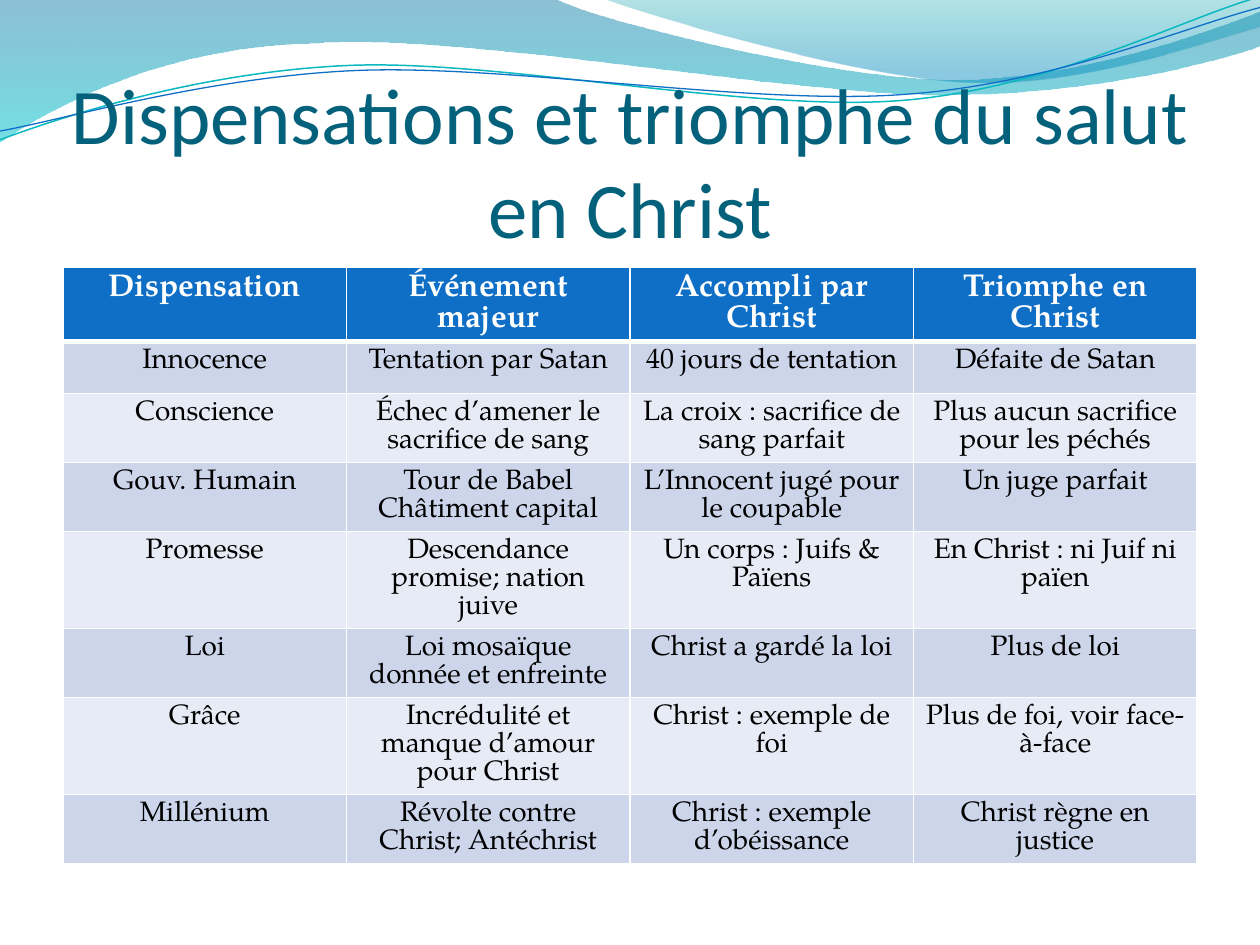
from lxml import etree
from pptx import Presentation
from pptx import util as u
from pptx.dml.color import RGBColor
from pptx.enum import text
from pptx.oxml.ns import qn

BLUE, TEAL, WHITE = "0F6FC6", "0AB8BF", "FFFFFF"
BANDS = ["CCD5EA", "E7EBF5"]
HEAD = ["Dispensation", "Événement majeur", "Accompli par Christ", "Triomphe en Christ"]
ROWS = [
    ["Innocence", "Tentation par Satan", "40 jours de tentation", "Défaite de Satan"],
    ["Conscience", "Échec d’amener le sacrifice de sang",
     "La croix : sacrifice de sang parfait", "Plus aucun sacrifice pour les péchés"],
    ["Gouv. Humain", "Tour de Babel\nChâtiment capital",
     "L’Innocent jugé pour le coupable", "Un juge parfait"],
    ["Promesse", "Descendance promise; nation juive",
     "Un corps : Juifs & Païens", "En Christ : ni Juif ni païen"],
    ["Loi", "Loi mosaïque donnée et enfreinte", "Christ a gardé la loi", "Plus de loi"],
    ["Grâce", "Incrédulité et manque d’amour pour Christ",
     "Christ : exemple de foi", "Plus de foi, voir face-à-face"],
    ["Millénium", "Révolte contre Christ; Antéchrist",
     "Christ : exemple d’obéissance", "Christ règne en justice"],
]

# An outline is a list of steps: one point is a line, three points are a curve.
WAVE = [[(0, 0)], [(4.4, -0.01)],
        [(4.76, 0.17), (6.64, 0.63), (7.58, 0.63)],
        [(8.53, 0.63), (9.58, 0.26), (10, 0.09)],
        [(10.01, 0.36)],
        [(9.83, 0.44), (8.7, 0.76), (7.46, 0.75)],
        [(6.22, 0.75), (3.82, 0.28), (2.57, 0.34)],
        [(1.29, 0.36), (0.46, 0.83), (-0.01, 1.13)], [(0, 0)]]
CREST = [[(4.79, -0.01)],
         [(5.09, 0.11), (6.82, 0.62), (7.69, 0.65)],
         [(8.56, 0.69), (9.61, 0.32), (10, 0.21)],
         [(10, 0)], [(4.79, -0.01)]]
TEAL_LINE = [[(0, 1.11)],
             [(0.48, 0.93), (1.58, 0.57), (2.77, 0.52)],
             [(3.95, 0.47), (5.93, 0.89), (7.13, 0.8)],
             [(8.33, 0.71), (9.38, 0.15), (9.98, -0.02)]]
BLUE_LINE = [[(0, 1.04)],
             [(0.47, 0.96), (1.64, 0.61), (2.83, 0.56)],
             [(4.03, 0.51), (5.97, 0.84), (7.17, 0.75)],
             [(8.36, 0.67), (9.41, 0.21), (10, 0.06)]]


def color(code):
    return RGBColor.from_string(code)


def outline(slide, steps, close):
    """Build a freeform, then join each three-point step into one Bézier curve."""
    pts = [(u.Inches(x), u.Inches(y)) for step in steps for x, y in step]
    pen = slide.shapes.build_freeform(*pts[0])
    pen.add_line_segments(pts[1:], close=close)
    shape = pen.convert_to_shape()
    shape.shadow.inherit = False
    lines = iter(list(shape.element.spPr.iter(qn("a:lnTo"))))
    for step in steps[1:]:
        group = [next(lines) for _ in step]
        if len(group) == 3:
            bend = etree.Element(qn("a:cubicBezTo"))
            group[0].addprevious(bend)
            for line in group:
                bend.append(line[0])
                line.getparent().remove(line)
    return shape


def wave(slide, steps, stops):
    """Draw a borderless area; stops hold position, colour and opacity."""
    shape = outline(slide, steps, True)
    shape.line.fill.background()
    shape.fill.gradient()
    shape.fill.gradient_angle = 270
    for stop, (pos, code, _) in zip(shape.fill.gradient_stops, stops):
        stop.position = pos
        stop.color.rgb = color(code)
    tags = list(shape.element.spPr.iter(qn("a:srgbClr")))
    for tag, (_, _, alpha) in zip(tags, stops):
        etree.SubElement(tag, qn("a:alpha"), val=str(alpha * 1000))


def stroke(slide, steps, code, width):
    shape = outline(slide, steps, False)
    shape.fill.background()
    shape.line.color.rgb = color(code)
    shape.line.width = u.Pt(width)


def write(frame, words, size, font, code, bold=False, pitch=None):
    frame.text = words
    frame.word_wrap = True
    for par in frame.paragraphs:
        par.alignment = text.PP_ALIGN.CENTER
        if pitch:
            par.line_spacing = u.Pt(pitch)
        for run in par.runs:
            face = run.font
            face.size = u.Pt(size)
            face.name = font
            face.bold = bold
            face.color.rgb = color(code)


def title(slide, words):
    box = slide.shapes.add_textbox(u.Inches(0.5), u.Inches(0.77), u.Inches(9), u.Inches(1.25))
    frame = box.text_frame
    frame.margin_left = frame.margin_right = frame.margin_bottom = 0
    frame.vertical_anchor = text.MSO_ANCHOR.BOTTOM
    write(frame, words, 45, "Calibri", "04617B")


def border(cell, top=1, bottom=1):
    props = cell._tc.get_or_add_tcPr()
    sides = {"lnL": 1, "lnR": 1, "lnT": top, "lnB": bottom}
    for i, (side, width) in enumerate(sides.items()):
        line = etree.Element(qn("a:" + side), w=str(u.Pt(width)))
        fill = etree.SubElement(line, qn("a:solidFill"))
        etree.SubElement(fill, qn("a:srgbClr"), val=WHITE)
        props.insert(i, line)


def grid(slide, rows):
    size = len(rows), len(rows[0])
    table = slide.shapes.add_table(*size, u.Inches(0.5), u.Inches(2.12),
                                   u.Inches(9), u.Inches(0.41 * len(rows))).table
    for r, row in enumerate(rows):
        table.rows[r].height = u.Inches(0.41)
        for c, words in enumerate(row):
            cell = table.cell(r, c)
            cell.fill.solid()
            cell.fill.fore_color.rgb = color(BANDS[(r - 1) % 2] if r else BLUE)
            border(cell, top=3 if r == 1 else 1, bottom=1 if r else 3)
            look = (dict(size=16, code="000000", pitch=16.1) if r
                    else dict(size=18, code=WHITE, bold=True, pitch=17.7))
            write(cell.text_frame, words, font="TeX Gyre Pagella", **look)


def main():
    deck = Presentation()
    deck.slide_width, deck.slide_height = u.Inches(10), u.Inches(7.5)
    slide = deck.slides.add_slide(deck.slide_layouts[6])
    wave(slide, WAVE, [(0, "0074A1", 45), (1, "00C6CF", 55)])
    wave(slide, CREST, [(0, "00A1A9", 30), (0.8, "008BBF", 45)])
    stroke(slide, TEAL_LINE, TEAL, 0.85)
    stroke(slide, BLUE_LINE, BLUE, 0.75)
    title(slide, "Dispensations et triomphe du salut en Christ")
    grid(slide, [HEAD] + ROWS)
    deck.save("out.pptx")


if __name__ == "__main__":
    main()
